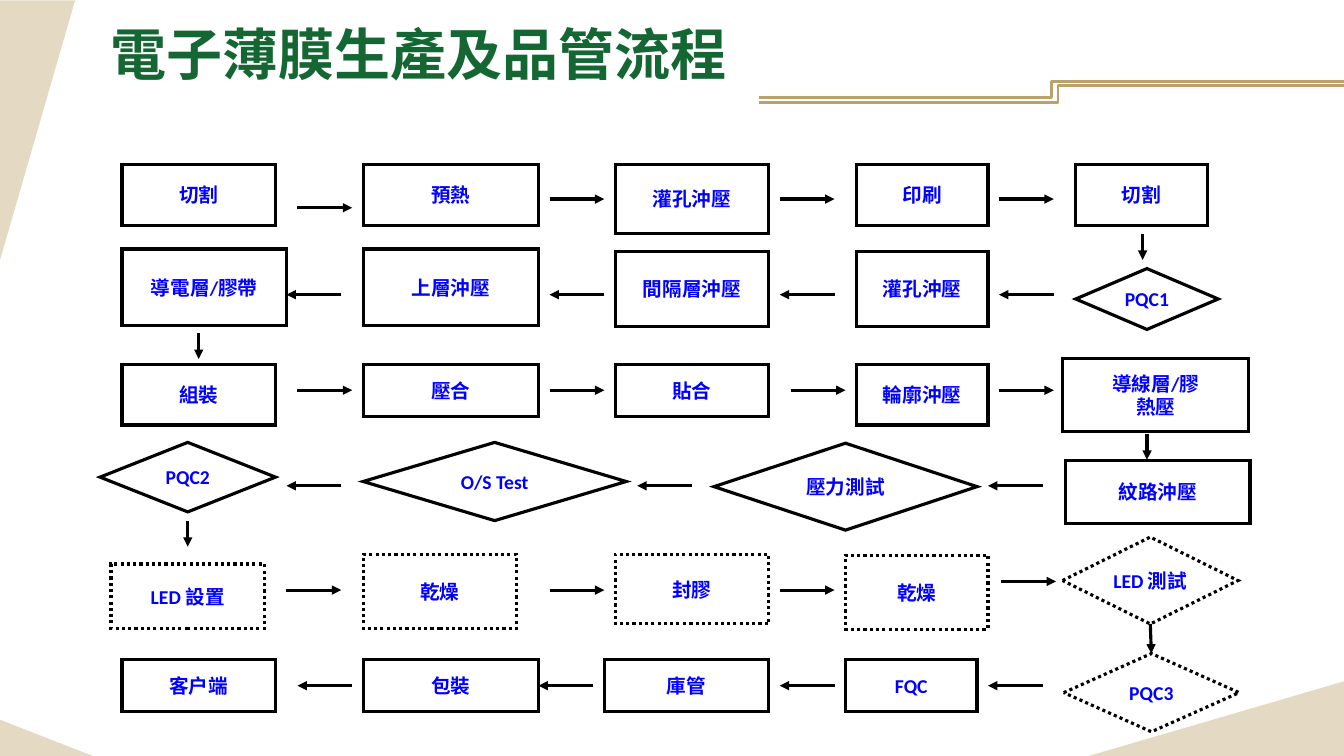
from dataclasses import dataclass

import pptx
import pptx.dml.color
import pptx.enum.dml
import pptx.enum.shapes
import pptx.enum.text
import pptx.oxml
import pptx.oxml.ns
import pptx.util
from pptx.enum.shapes import MSO_CONNECTOR, MSO_SHAPE

WIDTH, HEIGHT = pptx.util.Inches(13.33), pptx.util.Inches(7.5)
# The flow chart stands on a fine grid of cells, counted from its top left corner.
CELL_W, CELL_H = WIDTH / 122.6, HEIGHT / 87
ORIGIN_COL, ORIGIN_ROW = 11.13, 18.91
ARROW_COLS, ARROW_ROWS = 5, 3
RECT, DIAMOND = MSO_SHAPE.RECTANGLE, MSO_SHAPE.DIAMOND
TOP, BOTTOM, RIGHT = 0, 2, 3


def rgb(code: str) -> pptx.dml.color.RGBColor:
    return pptx.dml.color.RGBColor.from_string(code)


@dataclass(frozen=True)
class Theme:
    title: str = "146633"
    label: str = "0000FF"
    outline: str = "000000"
    gold: str = "BAA269"
    gold_alpha: int = 39
    title_size: float = 40
    label_size: float = 14
    outline_width: float = 2.25
    gold_width: float = 2
    latin: str = "Calibri"
    chinese: str = "Noto Sans CJK TC"


@dataclass(frozen=True)
class Step:
    """A process step, placed and sized in grid cells."""
    text: str
    col: float
    row: float
    cols: float
    rows: float
    kind: MSO_SHAPE = RECT
    dotted: bool = False


@dataclass(frozen=True)
class Lane:
    """A row of level arrows, given by their left ends."""
    row: float
    cols: tuple[float, ...]
    rightward: bool


@dataclass(frozen=True)
class Triangle:
    """A corner ornament, in percent of the slide's width and height."""
    left: float
    top: float
    width: float
    height: float
    rotation: float = 0
    flipped: bool = False


@dataclass(frozen=True)
class Rule:
    """A gold line, in percent of the slide's width and height."""
    kind: MSO_CONNECTOR
    start: tuple[float, float]
    end: tuple[float, float]


THEME = Theme()
STEPS = (
    Step("切割", 0, 0, 14, 7),
    Step("預熱", 22, 0, 16, 7),
    Step("灌孔沖壓", 45, 0, 14, 8),
    Step("印刷", 67, 0, 12, 7),
    Step("切割", 87, 0, 12, 7),
    Step("導電層/膠帶", 0, 9.75, 15, 8.8),
    Step("上層沖壓", 22, 9.75, 16, 8.8),
    Step("間隔層沖壓", 45, 10, 14, 8.7),
    Step("灌孔沖壓", 67, 10, 12, 8.7),
    Step("PQC1", 87, 12, 13, 7, DIAMOND),
    Step("組裝", 0, 23, 14, 7),
    Step("壓合", 22, 23, 16, 6),
    Step("貼合", 45, 23, 14, 6),
    Step("輪廓沖壓", 67, 23, 12, 7),
    Step("導線層/膠\n熱壓", 85.8, 22.3, 17, 8.5),
    Step("PQC2", -2, 32, 16, 8, DIAMOND),
    Step("O/S Test", 22, 32, 24, 9, DIAMOND),
    Step("壓力測試", 54, 32.1, 24, 10, DIAMOND),
    Step("紋路沖壓", 86.1, 34.1, 16.8, 7.2),
    Step("LED 設置", -1, 46, 14, 7.4, dotted=True),
    Step("乾燥", 22, 44.9, 14, 8.5, dotted=True),
    Step("封膠", 45, 44.9, 14, 8, dotted=True),
    Step("乾燥", 66, 45, 13, 8.5, dotted=True),
    Step("LED 測試", 85.8, 42.9, 16, 10, DIAMOND, True),
    Step("客戶端", 0, 57, 14, 6),
    Step("包裝", 22, 57, 16, 6),
    Step("庫管", 44, 57, 15, 6),
    Step("FQC", 66, 57, 12, 6),
    Step("PQC3", 85.9, 56.3, 16, 9, DIAMOND, True),
)
LANES = (
    Lane(5, (16,), True),
    Lane(4, (39, 60, 80), True),
    Lane(15, (15, 39, 60, 80), False),
    Lane(26, (16, 39, 61, 80), True),
    Lane(37, (15, 47, 79), False),
    Lane(49, (15, 39, 60), True),
    Lane(48, (80.2,), True),
    Lane(60, (16, 60, 79), False),
)
DOWN_ARROWS = ((93.1, 8), (7, 19.4), (93.5, 31), (6, 41))
TRIANGLES = (
    Triangle(81.02, 90.13, 18.98, 9.87, flipped=True),
    Triangle(-7.13, 12.53, 19.73, 10.13, rotation=90),
    Triangle(0, 95.2, 6.9, 4.8),
)
RULES = (
    Rule(MSO_CONNECTOR.ELBOW, (100, 10.8), (56.49, 12.93)),
    Rule(MSO_CONNECTOR.STRAIGHT, (58.96, 13.6), (56.49, 13.6)),
    Rule(MSO_CONNECTOR.ELBOW, (98.5, 11.33), (58.96, 13.6)),
    Rule(MSO_CONNECTOR.STRAIGHT, (100, 11.33), (95.05, 11.33)),
)


def apply(target, values: dict) -> None:
    for name, value in values.items():
        setattr(target, name, value)


def add_element(parent, tag: str, **attributes: str) -> None:
    element = pptx.oxml.parse_xml(f"<{tag} {pptx.oxml.ns.nsdecls('a')}/>")
    for name, value in attributes.items():
        element.set(name, value)
    parent.append(element)


def share(x: float, y: float) -> tuple[int, int]:
    return round(WIDTH * x / 100), round(HEIGHT * y / 100)


def cell(col: float, row: float) -> tuple[int, int]:
    return round((ORIGIN_COL + col) * CELL_W), round((ORIGIN_ROW + row) * CELL_H)


def format_span(span, size: float, color: str, latin: str) -> None:
    apply(span.font, {"size": pptx.util.Pt(size), "bold": True, "name": latin})
    span.font.color.rgb = rgb(color)
    add_element(span.font._element, "a:ea", typeface=THEME.chinese)


def draw_triangle(page, item: Triangle) -> None:
    shape = page.shapes.add_shape(MSO_SHAPE.RIGHT_TRIANGLE, *share(item.left, item.top),
                                  *share(item.width, item.height))
    shape.shadow.inherit = False
    shape.rotation = item.rotation
    shape.fill.solid()
    shape.fill.fore_color.rgb = rgb(THEME.gold)
    color = shape._element.spPr.find(".//" + pptx.oxml.ns.qn("a:srgbClr"))
    add_element(color, "a:alpha", val=str(THEME.gold_alpha * 1000))
    shape.line.fill.background()
    if item.flipped:
        shape._element.spPr.xfrm.set("flipH", "1")


def draw_line(page, kind: MSO_CONNECTOR, start: tuple[int, int], end: tuple[int, int],
              color: str, width: float):
    line = page.shapes.add_connector(kind, *start, *end)
    line.line.color.rgb = rgb(color)
    line.line.width = pptx.util.Pt(width)
    add_element(line._element.spPr, "a:effectLst")
    return line


def draw_arrow(page, start: tuple[float, float], end: tuple[float, float]):
    arrow = draw_line(page, MSO_CONNECTOR.STRAIGHT, cell(*start), cell(*end),
                      THEME.outline, THEME.outline_width)
    add_element(arrow.line._get_or_add_ln(), "a:tailEnd", type="triangle")
    return arrow


def draw_step(page, step: Step):
    size = round(step.cols * CELL_W), round(step.rows * CELL_H)
    box = page.shapes.add_shape(step.kind, *cell(step.col, step.row), *size)
    box.shadow.inherit = False
    box.fill.background()
    box.line.color.rgb = rgb(THEME.outline)
    box.line.width = pptx.util.Pt(THEME.outline_width)
    if step.dotted:
        box.line.dash_style = pptx.enum.dml.MSO_LINE.ROUND_DOT
    add_element(box.line._get_or_add_ln(), "a:miter", lim="800000")
    box.text_frame.text = step.text
    apply(box.text_frame, {"word_wrap": False,
                           "vertical_anchor": pptx.enum.text.MSO_ANCHOR.MIDDLE})
    for para in box.text_frame.paragraphs:
        para.alignment = pptx.enum.text.PP_ALIGN.CENTER
        format_span(para.runs[0], THEME.label_size, THEME.label, THEME.latin)
    return box


def draw_title(page, text: str) -> None:
    title = page.shapes.title
    left, top = share(0, 0.13)
    width, height = share(100, 14.93)
    apply(title, {"left": left, "top": top, "width": width, "height": height})
    title.text_frame.text = text
    apply(title.text_frame, {"margin_left": share(8.25, 0)[0], "word_wrap": True,
                             "auto_size": pptx.enum.text.MSO_AUTO_SIZE.NONE,
                             "vertical_anchor": pptx.enum.text.MSO_ANCHOR.MIDDLE})
    para = title.text_frame.paragraphs[0]
    apply(para, {"alignment": pptx.enum.text.PP_ALIGN.LEFT, "line_spacing": 0.9})
    format_span(para.runs[0], THEME.title_size, THEME.title, THEME.chinese)


def draw_flow(page) -> None:
    boxes = {step.text: draw_step(page, step) for step in STEPS}
    for lane in LANES:
        for col in lane.cols:
            ends = [(col, lane.row), (col + ARROW_COLS, lane.row)]
            draw_arrow(page, *(ends if lane.rightward else reversed(ends)))
    for col, row in DOWN_ARROWS:
        draw_arrow(page, (col, row), (col, row + ARROW_ROWS))
    packing = draw_arrow(page, (38 + ARROW_COLS, 60), (38, 60))
    packing.end_connect(boxes["包裝"], RIGHT)
    checking = draw_arrow(page, (94, 53), (94, 53 + ARROW_ROWS))
    checking.begin_connect(boxes["LED 測試"], BOTTOM)
    checking.end_connect(boxes["PQC3"], TOP)


def main() -> None:
    deck = pptx.Presentation()
    apply(deck, {"slide_width": WIDTH, "slide_height": HEIGHT})
    page = deck.slides.add_slide(deck.slide_layouts.get_by_name("Title Only"))
    for rule in RULES:
        draw_line(page, rule.kind, share(*rule.start), share(*rule.end),
                  THEME.gold, THEME.gold_width)
    for triangle in TRIANGLES:
        draw_triangle(page, triangle)
    draw_flow(page)
    draw_title(page, "電子薄膜生產及品管流程")
    deck.save("out.pptx")


if __name__ == "__main__":
    main()
